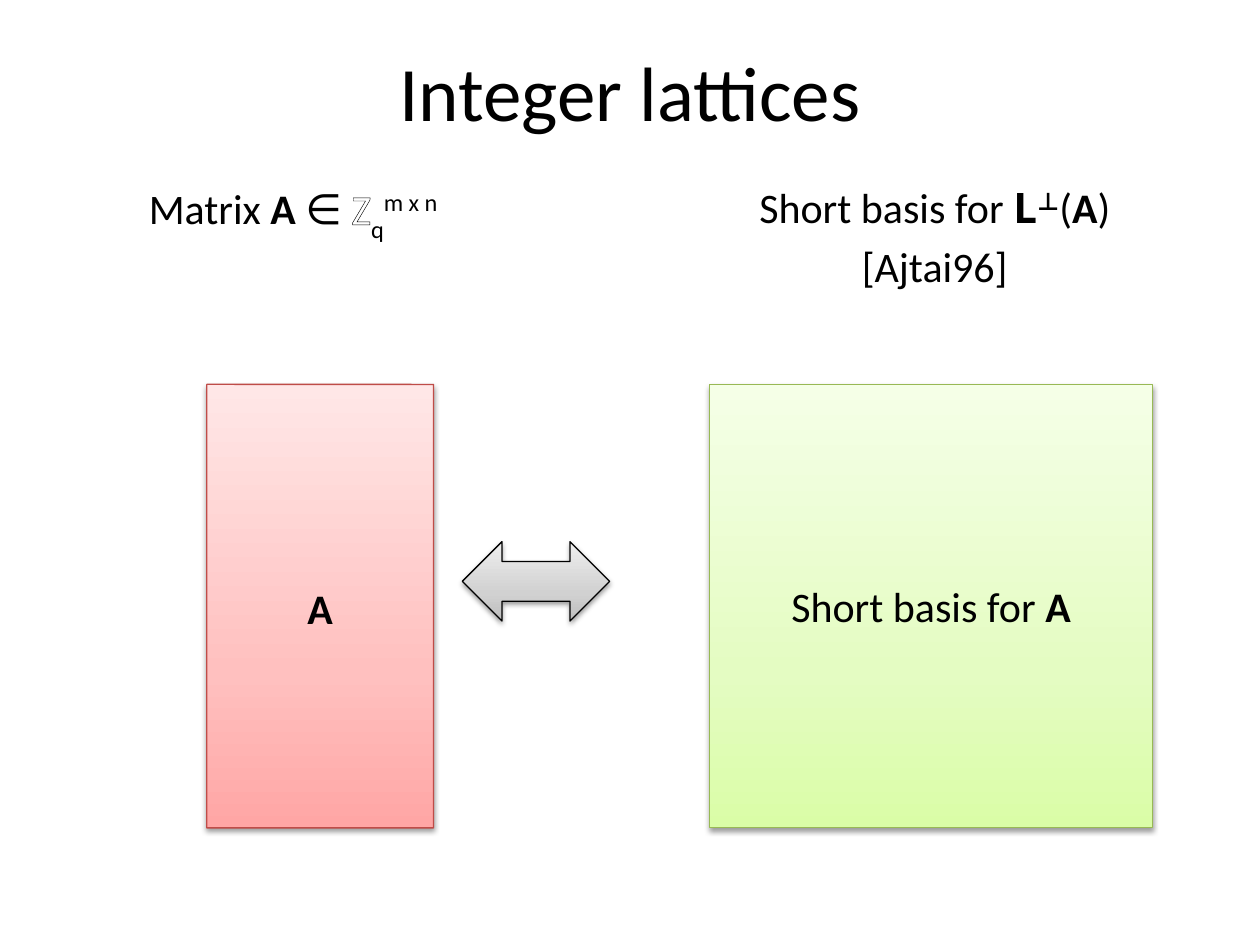
"""Build the slide on integer lattices and short bases."""
from dataclasses import dataclass

import lxml.etree
import pptx
import pptx.dml.color
import pptx.enum.shapes
import pptx.enum.text
import pptx.oxml.ns
import pptx.util

Cm, Pt = pptx.util.Cm, pptx.util.Pt
Kind = pptx.enum.shapes.MSO_SHAPE
Align = pptx.enum.text.PP_ALIGN
Anchor = pptx.enum.text.MSO_ANCHOR
qn = pptx.oxml.ns.qn


@dataclass(frozen=True)
class Theme:
    ink: str = "000000"
    paper: str = "FFFFFF"
    green: tuple = ("DAFDA7", "E4FCC2", "F5FFE7")
    green_edge: str = "98B955"
    red: tuple = ("FFA6A5", "FFC0BF", "FFE7E7")
    red_edge: str = "BF4C48"
    grey: tuple = ("BDBDBD", "D1D1D1", "EEEEEE")
    stops: tuple = (0, 35, 100)
    font: str = "Calibri"
    symbol_font: str = "Open Sans"
    title_size: float = 44
    body_size: float = 24
    line_spacing: float = 1.17
    edge_width: float = 0.75


THEME = Theme()


@dataclass(frozen=True)
class Span:
    text: str
    bold: bool = False
    font: str = THEME.font
    baseline: int = 0
    outlined: bool = False


@dataclass(frozen=True)
class Area:
    left: float
    top: float
    width: float
    height: float

    def lengths(self) -> tuple:
        return Cm(self.left), Cm(self.top), Cm(self.width), Cm(self.height)


@dataclass(frozen=True)
class Block:
    kind: object
    area: Area
    colours: tuple
    edge: str
    spans: tuple = ()
    top_inset: float = 0.13
    bottom_inset: float = 0.13


@dataclass(frozen=True)
class Caption:
    area: Area
    align: object
    lines: tuple


def rgb(value: str) -> pptx.dml.color.RGBColor:
    return pptx.dml.color.RGBColor.from_string(value)


def add_element(parent, tag: str, **attributes):
    return lxml.etree.SubElement(parent, qn(tag), {key: str(value) for key, value in attributes.items()})


def add_span(para, span: Span, size: float) -> None:
    run = para.add_run()
    run.text = span.text
    run.font.name = span.font
    run.font.size = Pt(size)
    run.font.bold = span.bold
    run.font.color.rgb = rgb(THEME.paper if span.outlined else THEME.ink)
    properties = run.font._element
    if span.baseline:
        properties.set("baseline", str(span.baseline * 1000))
    if span.outlined:
        outline = add_element(properties, "a:ln", w=Pt(THEME.edge_width))
        add_element(add_element(outline, "a:solidFill"), "a:srgbClr", val=THEME.ink)
        properties.insert(0, outline)


def write_lines(frame, lines: tuple, align, size: float, spacing: float = 1) -> None:
    for index, spans in enumerate(lines):
        para = frame.add_paragraph() if index else frame.paragraphs[0]
        para.alignment = align
        para.line_spacing = spacing
        para.space_before = Pt(0)
        for span in spans:
            add_span(para, span, size)


def draw_block(page, block: Block) -> None:
    shape = page.shapes.add_shape(block.kind, *block.area.lengths())
    if block.kind == Kind.ROUNDED_RECTANGLE:
        shape.adjustments[0] = 0.001
    shape.fill.gradient()
    shape.fill.gradient_angle = 90
    shape.line.color.rgb = rgb(block.edge)
    shape.line.width = Pt(THEME.edge_width)
    shape.shadow.inherit = False
    properties = shape._element.spPr
    stops = properties.find(qn("a:gradFill")).find(qn("a:gsLst"))
    for stop in list(stops):
        stops.remove(stop)
    for position, colour in zip(THEME.stops, block.colours):
        add_element(add_element(stops, "a:gs", pos=position * 1000), "a:srgbClr", val=colour)
    shadow = add_element(properties.find(qn("a:effectLst")), "a:outerShdw", blurRad=Pt(3.1),
                         dist=Pt(1.6), dir=90 * 60000, rotWithShape=0)
    add_element(add_element(shadow, "a:srgbClr", val=THEME.ink), "a:alpha", val=38000)
    frame = shape.text_frame
    frame.vertical_anchor = Anchor.MIDDLE
    frame.margin_top, frame.margin_bottom = Cm(block.top_inset), Cm(block.bottom_inset)
    if block.spans:
        write_lines(frame, (block.spans,), Align.CENTER, THEME.body_size)


def draw_caption(page, caption: Caption) -> None:
    box = page.shapes.add_textbox(*caption.area.lengths())
    frame = box.text_frame
    frame.word_wrap = True
    frame.margin_left = frame.margin_right = Cm(0.23)
    frame.margin_top = frame.margin_bottom = Cm(0.1)
    write_lines(frame, caption.lines, caption.align, THEME.body_size, THEME.line_spacing)


def draw_title(page, text: str, area: Area) -> None:
    title = page.shapes.title
    title.left, title.top, title.width, title.height = area.lengths()
    title.text_frame.auto_size = pptx.enum.text.MSO_AUTO_SIZE.NONE
    title.text_frame.vertical_anchor = Anchor.MIDDLE
    write_lines(title.text_frame, ((Span(text),),), Align.CENTER, THEME.title_size, THEME.line_spacing)


BLOCKS = (
    Block(Kind.RECTANGLE, Area(14.3, 7.75, 8.94, 8.94), THEME.green, THEME.green_edge,
          (Span("Short basis for "), Span("A", bold=True))),
    Block(Kind.ROUNDED_RECTANGLE, Area(4.17, 7.75, 4.57, 8.94), THEME.red, THEME.red_edge,
          (Span("A", bold=True),), top_inset=0.18, bottom_inset=0.1),
    Block(Kind.LEFT_RIGHT_ARROW, Area(9.32, 10.92, 2.97, 1.6), THEME.grey, THEME.ink),
)

CAPTIONS = (
    Caption(Area(2.77, 3.38, 7.34, 1.6), Align.LEFT, (
        (Span("Matrix "), Span("A ", bold=True), Span("∈ "), Span("Z", outlined=True),
         Span("q", baseline=-33), Span("m x n", baseline=33)),
    )),
    Caption(Area(12.29, 3.38, 13.11, 2.59), Align.CENTER, (
        (Span("Short basis for "), Span("L", bold=True, font=THEME.symbol_font),
         Span("⊥", bold=True, font=THEME.symbol_font, baseline=30),
         Span("("), Span("A", bold=True), Span(")")),
        (Span("[Ajtai96]"),),
    )),
)


def main() -> None:
    deck = pptx.Presentation()
    deck.slide_width, deck.slide_height = Cm(25.4), Cm(19.05)
    page = deck.slides.add_slide(deck.slide_layouts.get_by_name("Title Only"))
    draw_title(page, "Integer lattices", Area(1.27, 0.2, 22.86, 2.95))
    for block in BLOCKS:
        draw_block(page, block)
    for caption in CAPTIONS:
        draw_caption(page, caption)
    deck.save("out.pptx")


if __name__ == "__main__":
    main()
